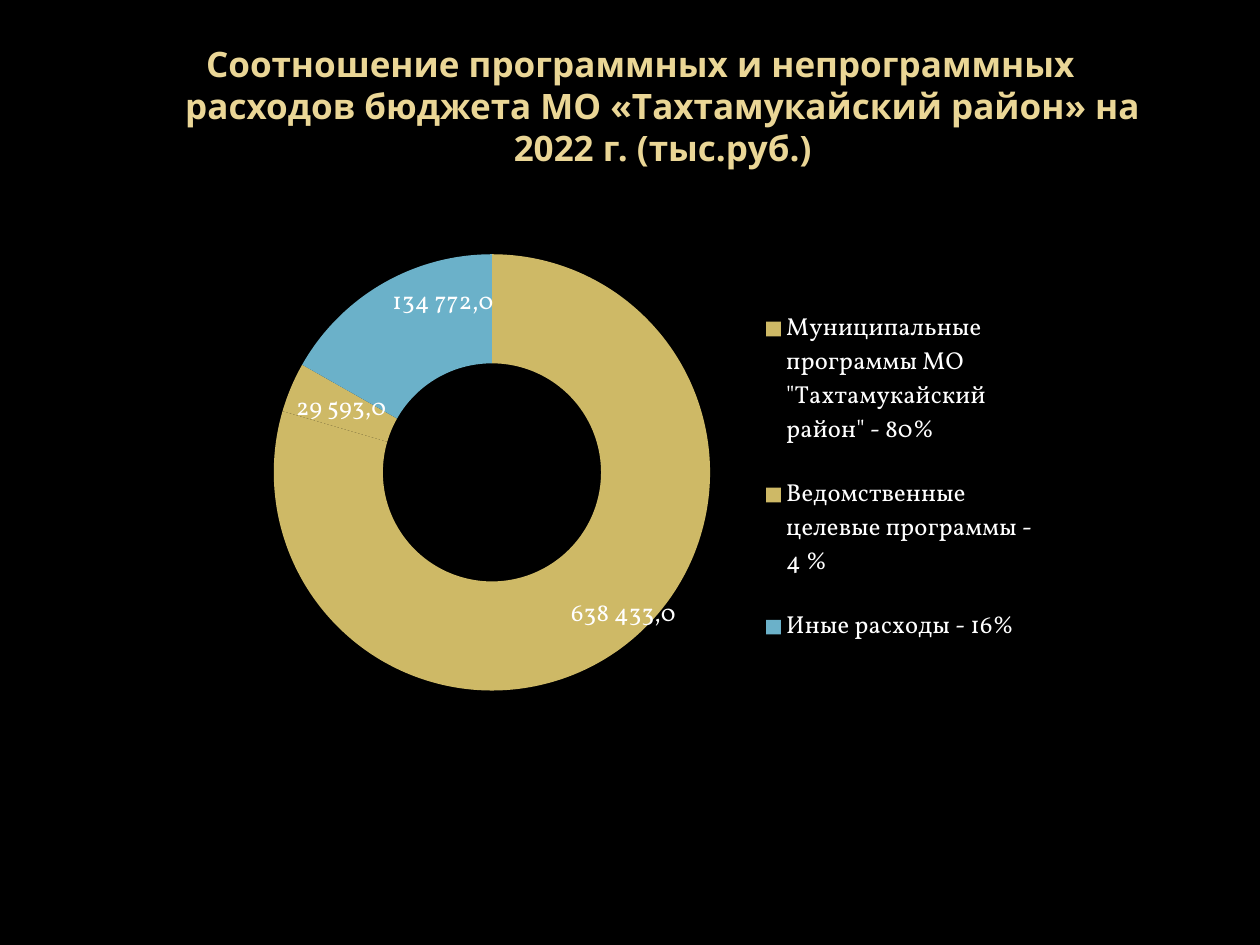
from pptx import Presentation
from pptx.chart.data import CategoryChartData
from pptx.dml.color import RGBColor
from pptx.enum import chart as charts, text
from pptx.oxml import parse_xml
from pptx.oxml.ns import nsdecls, qn
from pptx.util import Inches, Pt

COLORS = {"back": "000000", "title": "EAD696", "text": "FFFFFF",
          "gold": "CEB966", "blue": "6BB1C9"}
TITLE = ("Соотношение программных и непрограммных расходов бюджета "
         "МО «Тахтамукайский район» на 2022 г. (тыс.руб.)")
# category, value, label, colour, label shift as a share of the chart
EXPENSES = [
    ('Муниципальные программы МО "Тахтамукайский район" - 80%',
     638433, "638 433,0", "gold", (0.04, 0.02)),
    ("Ведомственные целевые программы - 4 %",
     29593, "29 593,0", "gold", None),
    ("Иные расходы - 16%", 134772, "134 772,0", "blue", (0.04, -0.05)),
]
# shares of the chart's width and height
PLOT = {"x": 0.07, "y": 0.11, "w": 0.53, "h": 0.78}
LEGEND = {"x": 0.65, "y": 0.16, "w": 0.34, "h": 0.7}


def color(name):
    return RGBColor.from_string(COLORS[name])


def style(font, face, size, name):
    font.name, font.size = face, Pt(size)
    font.color.rgb = color(name)


def layout(parts):
    """Manual chart layout from (tag, value) pairs."""
    body = "".join(f'<c:{tag} val="{value}"/>' for tag, value in parts)
    return parse_xml(f'<c:layout {nsdecls("c")}><c:manualLayout>{body}'
                     '</c:manualLayout></c:layout>')


def place(element, after, parts):
    """Give a chart part a fixed frame; after is the tag it follows, if any."""
    for old in element.findall(qn("c:layout")):
        element.remove(old)
    position = 0
    if after:
        position = element.index(element.find(qn(after))) + 1
    element.insert(position, layout(parts))


def add_title(page):
    box = page.shapes.add_textbox(Inches(0.91), Inches(0.21),
                                  Inches(8.35), Inches(1.25))
    frame = box.text_frame
    frame.word_wrap = True
    frame.vertical_anchor = text.MSO_ANCHOR.MIDDLE
    para = frame.paragraphs[0]
    para.alignment = text.PP_ALIGN.CENTER
    props = para._p.get_or_add_pPr()
    props.set("marL", str(Inches(0.35)))
    props.set("indent", str(-Inches(0.35)))
    span = para.add_run()
    span.text = TITLE
    style(span.font, "Open Sans", 20, "title")
    span.font.bold = True


def add_doughnut(page):
    data = CategoryChartData(number_format="0.0")
    data.categories = [row[0] for row in EXPENSES]
    data.add_series("Series 1", [row[1] for row in EXPENSES])
    chart = page.shapes.add_chart(
        charts.XL_CHART_TYPE.DOUGHNUT, Inches(1.67), Inches(1.53),
        Inches(6.67), Inches(4.44), data).chart
    style(chart.font, "Vollkorn", 18, "text")
    chart.has_title = False
    chart.has_legend = True
    chart.legend.position = charts.XL_LEGEND_POSITION.RIGHT
    chart.legend.include_in_layout = False
    style(chart.legend.font, "Vollkorn", 14, "text")

    edges = [("xMode", "edge"), ("yMode", "edge")]
    place(chart._chartSpace.chart.plotArea, None,
          [("layoutTarget", "inner"), *edges, *PLOT.items()])
    place(chart.legend._element, "c:legendPos", [*edges, *LEGEND.items()])

    plot = chart.plots[0]
    plot.vary_by_categories = True
    plot._element.find(qn("c:holeSize")).set("val", "50")
    series = plot.series[0]
    labels = series.data_labels
    labels.show_value = True
    labels.show_percentage = False
    labels.number_format = "0.0"
    labels.number_format_is_linked = False
    style(labels.font, "Vollkorn", 14, "text")

    for index, (_, _, label, fill, shift) in enumerate(EXPENSES):
        point = series.points[index]
        point.format.fill.solid()
        point.format.fill.fore_color.rgb = color(fill)
        point.format.line.fill.background()
        span = point.data_label.text_frame.paragraphs[0].add_run()
        span.text = label
        style(span.font, "Vollkorn", 14, "text")
        if shift:
            place(point.data_label._dLbl, "c:idx", zip("xy", shift))


def main():
    deck = Presentation()
    deck.slide_width, deck.slide_height = Inches(10), Inches(7.5)
    page = deck.slides.add_slide(deck.slide_layouts[6])
    page.background.fill.solid()
    page.background.fill.fore_color.rgb = color("back")
    add_title(page)
    add_doughnut(page)
    deck.save("out.pptx")


if __name__ == "__main__":
    main()
